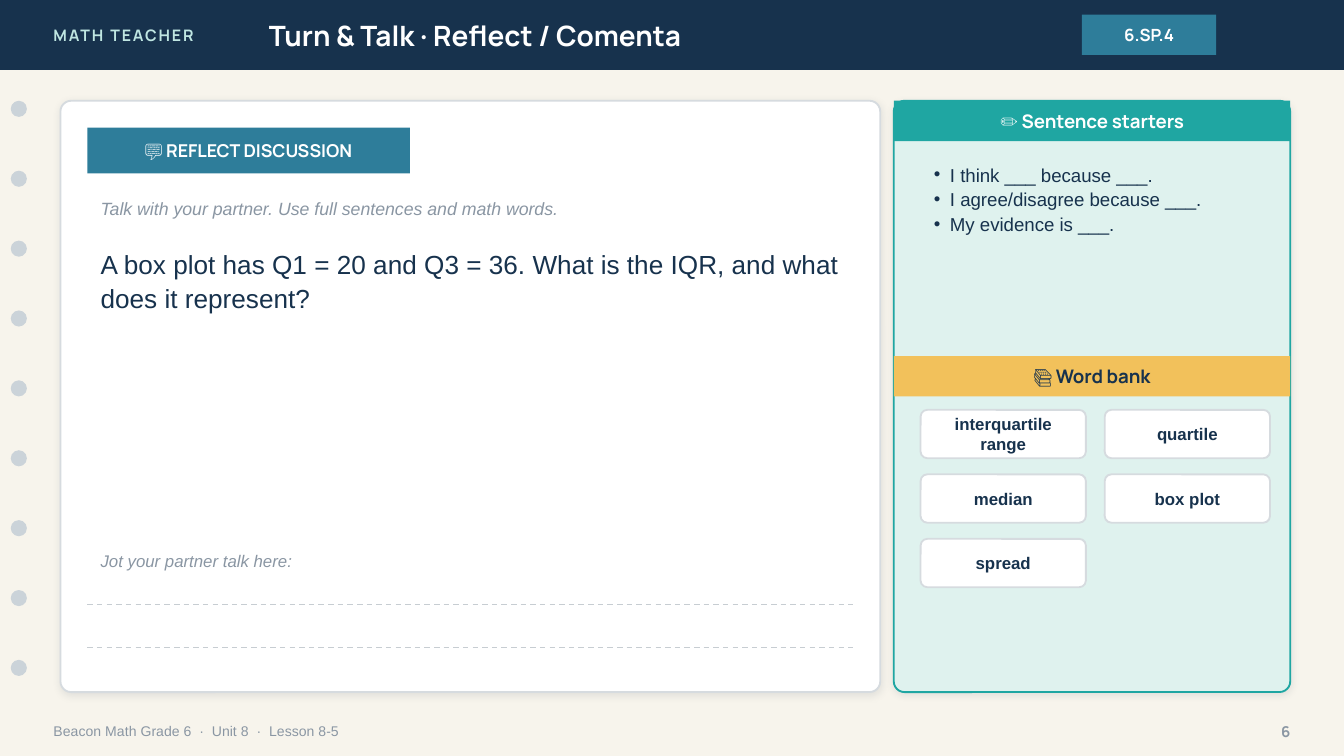
from lxml import etree
from pptx import Presentation
from pptx import util as u
from pptx.dml.color import RGBColor
from pptx.enum import dml, shapes, text
from pptx.oxml.ns import qn

WIDTH, HEIGHT = 10, 10 * 9 / 16
COLUMNS = 1000
CELL = u.Inches(WIDTH) // COLUMNS
RECT = shapes.MSO_SHAPE.RECTANGLE
ROUND = shapes.MSO_SHAPE.ROUNDED_RECTANGLE
OVAL = shapes.MSO_SHAPE.OVAL
LEFT, CENTER, RIGHT = text.PP_ALIGN.LEFT, text.PP_ALIGN.CENTER, text.PP_ALIGN.RIGHT
TOP, MIDDLE = text.MSO_ANCHOR.TOP, text.MSO_ANCHOR.MIDDLE
HEAD, BODY = "Manrope", "Arial"
NAVY, BLUE, TEAL, MINT = "17324D", "2E7D9A", "1FA6A2", "DFF2EE"
WHITE, GREY, EDGE, GOLD = "FFFFFF", "8A96A3", "D6DBDF", "F2C15B"


def rgb(value):
    """Turn a hex string into a colour."""
    return RGBColor.from_string(value)


def emu(box):
    """Convert grid columns and rows to slide lengths."""
    return [u.Emu(round(n * CELL)) for n in box]


def inside(box, left, top, width, height):
    """Place a box by its offset from the corner of another."""
    return box[0] + left, box[1] + top, width, height


def write(sp, content, size=9, color=NAVY, font=HEAD, bold=False, italic=False,
          align=LEFT, anchor=MIDDLE, leading=None, tracking=None, bullet=None):
    """Fill a shape with one paragraph per line of text."""
    tf = sp.text_frame
    tf.word_wrap = True
    tf.auto_size = text.MSO_AUTO_SIZE.NONE
    tf.vertical_anchor = anchor
    for i, line in enumerate(content.split("\n")):
        p = tf.paragraphs[0] if i == 0 else tf.add_paragraph()
        p.alignment = align
        if leading:
            p.line_spacing = leading
        if bullet:
            pPr = p._p.get_or_add_pPr()
            pPr.set("marL", str(u.Inches(0.12)))
            pPr.set("indent", str(-u.Inches(0.12)))
            etree.SubElement(pPr, qn("a:buFont"), typeface=font)
            etree.SubElement(pPr, qn("a:buChar"), char=bullet)
        r = p.add_run()
        r.text = line
        r.font.size, r.font.name = u.Pt(size), font
        r.font.bold, r.font.italic = bold, italic
        r.font.color.rgb = rgb(color)
        if tracking:
            r._r.get_or_add_rPr().set("spc", str(tracking * 100))


def add_text(s, box, content, **fmt):
    """Add a text box."""
    write(s.shapes.add_textbox(*emu(box)), content, **fmt)


def add_box(s, box, fill, kind=RECT, line=None, radius=None, content=None, **fmt):
    """Add a filled shape, with centred text if any."""
    sp = s.shapes.add_shape(kind, *emu(box))
    sp.shadow.inherit = False
    sp.fill.solid()
    sp.fill.fore_color.rgb = rgb(fill)
    if line:
        sp.line.color.rgb = rgb(line)
        sp.line.width = u.Pt(1)
    else:
        sp.line.fill.background()
    if radius:
        sp.adjustments[0] = radius / min(box[2:])
    if content:
        write(sp, content, align=CENTER, bold=True, **fmt)
    return sp


def add_card(s, box, fill, line, radius):
    """Add a rounded panel with a soft shadow."""
    sp = add_box(s, box, fill, ROUND, line, radius)
    effects = sp._element.spPr.find(qn("a:effectLst"))
    shadow = etree.SubElement(effects, qn("a:outerShdw"), blurRad=str(u.Pt(4)),
                              dist=str(u.Pt(1)), dir="5400000", algn="bl", rotWithShape="0")
    color = etree.SubElement(shadow, qn("a:srgbClr"), val="1C2E42")
    etree.SubElement(color, qn("a:alpha"), val="10000")


def add_rule(s, x, y, width):
    """Add a dashed writing line."""
    c = s.shapes.add_connector(shapes.MSO_CONNECTOR.STRAIGHT, *emu((x, y, x + width, y)))
    c.line.color.rgb = rgb("C7CDD2")
    c.line.width = u.Pt(0.75)
    c.line.dash_style = dml.MSO_LINE.DASH
    etree.SubElement(c._element.spPr, qn("a:effectLst"))


def header(s, box, brand, title, standard):
    """Draw the top band with its title and standard tag."""
    height = box[3]
    add_box(s, box, NAVY)
    add_text(s, inside(box, 30, 0, 240, height), brand, size=8.5, color="BFE6E2",
             bold=True, tracking=1)
    sp = s.shapes.title
    s.shapes._spTree.append(sp._element)
    sp.left, sp.top, sp.width, sp.height = emu(inside(box, 190, 0, 560, height))
    write(sp, title, size=15, color=WHITE, bold=True)
    add_box(s, inside(box, 805, 11, 100, 30), BLUE, content=standard, color=WHITE)


def binding(s, box, holes, size=12):
    """Draw evenly spaced notebook holes down a strip."""
    pitch = (box[3] - size) / (holes - 1)
    for i in range(holes):
        add_box(s, inside(box, 0, i * pitch, size, size), "CBD3D9", OVAL)


def footer(s, box, lesson, page):
    """Write the lesson name and the page number."""
    add_text(s, inside(box, 0, 0, 700, box[3]), lesson, size=7.5, color=GREY, font=BODY)
    add_text(s, inside(box, box[2] - 50, 0, 50, box[3]), page, size=8, color=GREY,
             bold=True, align=RIGHT)


def discussion(s, box, label, hint, question, prompt):
    """Draw the question card with lines for notes."""
    margin = 20
    width = box[2] - 2 * margin
    add_card(s, box, WHITE, EDGE, 8)
    add_box(s, inside(box, margin, margin, 240, 34), BLUE, content=label, size=9.5, color=WHITE)
    add_text(s, inside(box, margin, 65, width, 30), hint, size=9.5, color=GREY,
             font=BODY, italic=True)
    add_text(s, inside(box, margin, 103, width, 200), question, size=14, font=BODY,
             anchor=TOP, leading=1.08)
    add_text(s, inside(box, margin, 330, width, 25), prompt, color=GREY, font=BODY, italic=True)
    for row in (375, 407):
        add_rule(s, box[0] + margin, box[1] + row, width)


def support(s, box, starters_label, starters, bank_label, words):
    """Draw the sentence starters above a two-column word bank."""
    add_card(s, box, MINT, TEAL, 8)
    add_box(s, inside(box, 0, 0, box[2], 30), TEAL, content=starters_label, size=10, color=WHITE)
    add_text(s, inside(box, 20, 40, 260, 140), "\n".join(starters), size=10, font=BODY,
             anchor=TOP, leading=1.1, bullet="•")
    add_box(s, inside(box, 0, 190, box[2], 30), GOLD, content=bank_label, size=10)
    for i, word in enumerate(words):
        row, column = divmod(i, 2)
        add_box(s, inside(box, 20 + column * 137, 230 + row * 48, 123, 36), WHITE, ROUND,
                EDGE, 5, content=word, font=BODY)


def main():
    """Build the slide and save it."""
    prs = Presentation()
    prs.slide_width, prs.slide_height = u.Inches(WIDTH), u.Inches(HEIGHT)
    s = prs.slides.add_slide(prs.slide_layouts[5])
    s.background.fill.solid()
    s.background.fill.fore_color.rgb = rgb("F7F4EC")
    header(s, (0, 0, COLUMNS, 52), "MATH TEACHER", "Turn & Talk · Reflect / Comenta", "6.SP.4")
    binding(s, (8, 75, 12, 428), 9)
    footer(s, (30, 530, 940, 28), "Beacon Math Grade 6  ·  Unit 8  ·  Lesson 8-5", "6")
    discussion(s, (45, 75, 610, 440), "💬 REFLECT DISCUSSION",
               "Talk with your partner. Use full sentences and math words.",
               "A box plot has Q1 = 20 and Q3 = 36. What is the IQR, and what does it represent?",
               "Jot your partner talk here:")
    support(s, (665, 75, 295, 440), "✏️ Sentence starters",
            ["I think ___ because ___.", "I agree/disagree because ___.", "My evidence is ___."],
            "📚 Word bank",
            ["interquartile range", "quartile", "median", "box plot", "spread"])
    prs.save("out.pptx")


if __name__ == "__main__":
    main()
